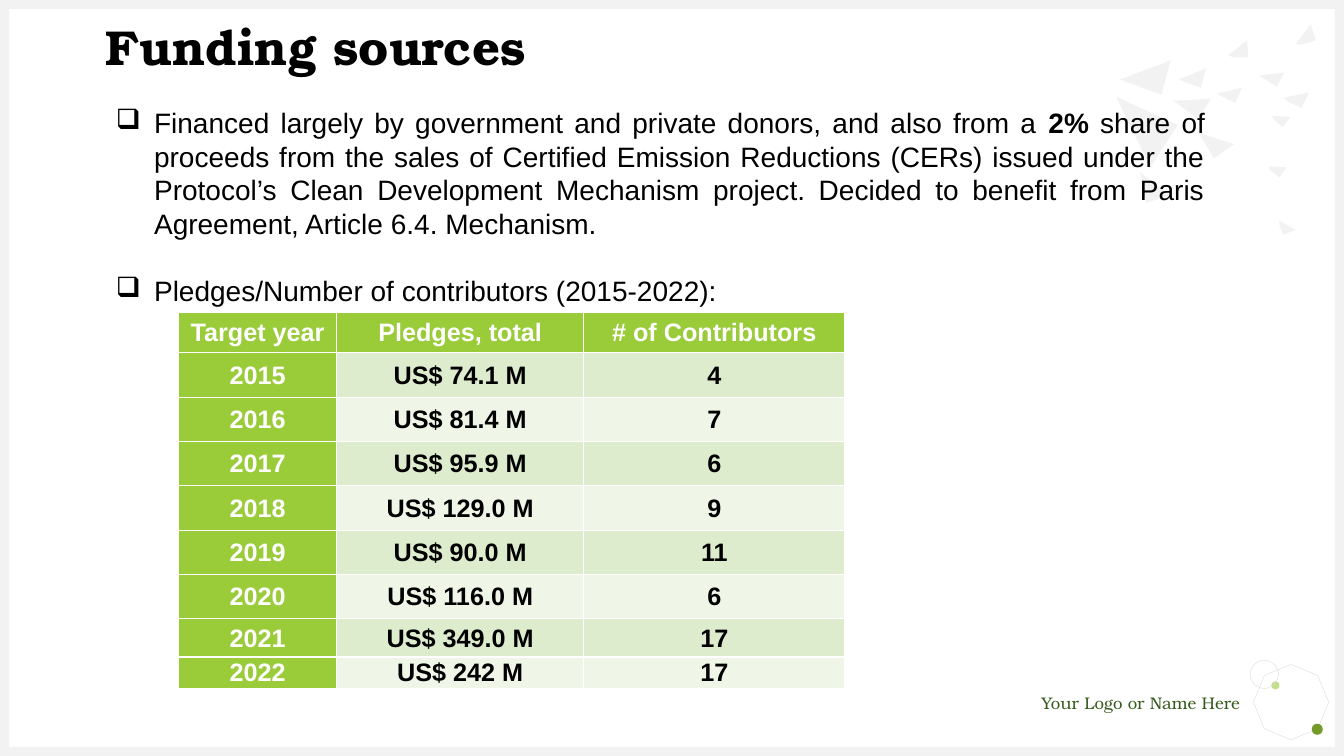
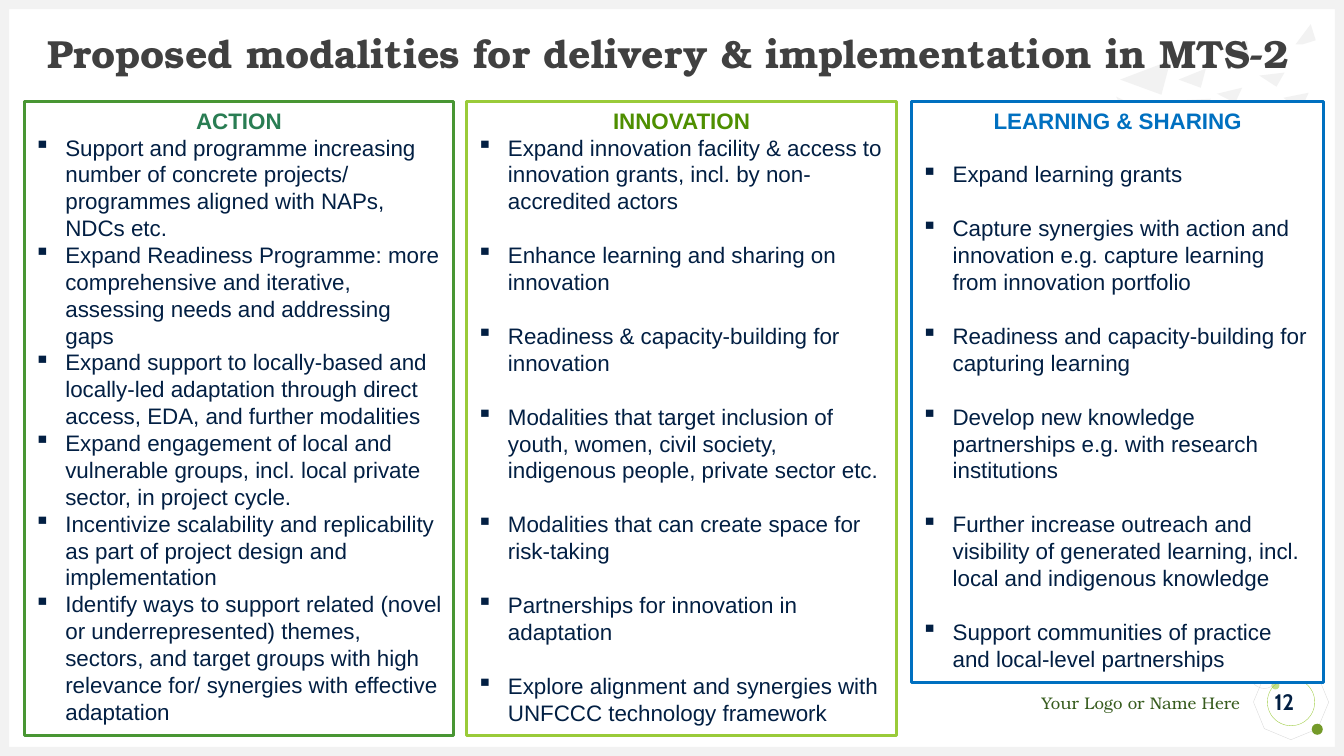
from dataclasses import dataclass

import pptx
import pptx.dml.color
import pptx.enum.shapes
import pptx.enum.text
import pptx.oxml
import pptx.oxml.ns
import pptx.util

SCALE = 9144
SHAPES = pptx.enum.shapes.MSO_SHAPE
ALIGN = pptx.enum.text.PP_ALIGN
ANCHOR = pptx.enum.text.MSO_ANCHOR


@dataclass(frozen=True)
class TextStyle:
    font: str
    size: int
    color: str
    bold: bool = False


class Theme:
    white = "FFFFFF"
    frame = "F2F2F2"
    outline = "D9D9D9"
    green = "9ACB39"
    light_green = "C2E088"
    dark_green = "749A29"
    row_bands = ("DEECCE", "EFF6E8")
    action = ("489633", "297D53")
    innovation = (green, "4E8F00")
    learning = ("0070C0", "0070C0")
    funding_title = TextStyle("TeX Gyre Bonum", 35, "000000", True)
    modalities_title = TextStyle("TeX Gyre Bonum", 28, "404040", True)
    footer = TextStyle("TeX Gyre Bonum", 12, "375C1E")
    body = TextStyle("Arial", 20, "000000")
    table_head = TextStyle("Arial", 18, white, True)
    table_cell = TextStyle("Arial", 18, "000000", True)
    panel_body = TextStyle("Arial", 16, "021F43")
    page_number = TextStyle("Cabin", 16, "021F43", True)
    body_gap = 24
    panel_gap = 19.3


UPPER_TRIANGLES = [
    [(1161, 60), (1152, 94), (1111, 79)],
    [(1201, 98), (1188, 118), (1164, 100)],
    [(1196, 68), (1191, 87), (1169, 79)],
    [(1232, 87), (1225, 102), (1207, 93)],
    [(1237, 40), (1238, 57), (1224, 57), (1218, 55)],
    [(1300, 24), (1305, 40), (1292, 44), (1285, 44)],
    [(1274, 72), (1266, 86), (1249, 75)],
    [(1298, 92), (1291, 107), (1278, 101), (1273, 97)],
    [(1168, 124), (1141, 166), (1107, 96)],
]
LOWER_TRIANGLES = [
    [(1280, 116), (1272, 126), (1264, 119), (1261, 115)],
    [(1224, 143), (1204, 157), (1189, 132)],
    [(1276, 166), (1269, 176), (1260, 169), (1258, 165)],
    [(1160, 194), (1137, 201), (1131, 171)],
    [(1285, 228), (1273, 233), (1269, 223), (1269, 219)],
]


def px(length):
    return pptx.util.Emu(length * SCALE)


def rgb(color):
    return pptx.dml.color.RGBColor.from_string(color)


class Deck:
    def __init__(self):
        self.presentation = pptx.Presentation()
        self.presentation.slide_width = px(1333)
        self.presentation.slide_height = px(750)
        self.slide = None

    def new_slide(self, triangles):
        self.slide = self.presentation.slides.add_slide(self.presentation.slide_layouts[6])
        self.shape(SHAPES.OCTAGON, (1246, 662, 69, 69), line=Theme.outline).rotation = 22.7
        self.shape(SHAPES.OVAL, (1261, 676, 8, 8), fill=Theme.light_green)
        self.shape(SHAPES.OVAL, (1301, 718, 11, 11), fill=Theme.dark_green)
        footer = self.text_box((955, 687, 275, 20), inset=0)
        self.add_text(footer, "Your Logo or Name Here", Theme.footer, ALIGN.RIGHT)
        self.shape(SHAPES.OVAL, (1240, 655, 28, 28), line=Theme.outline)
        for bounds in ((0, 741, 1333, 9), (0, 0, 1333, 9), (0, 0, 9, 750), (1324, 0, 9, 750)):
            self.shape(SHAPES.RECTANGLE, bounds, fill=Theme.frame)
        for points in triangles:
            self.outline(points, Theme.frame)

    def paint(self, shape, fill, line=None, line_width=0.25):
        shape.shadow.inherit = False
        if fill:
            shape.fill.solid()
            shape.fill.fore_color.rgb = rgb(fill)
        else:
            shape.fill.background()
        if line:
            shape.line.color.rgb = rgb(line)
            shape.line.width = pptx.util.Pt(line_width)
        else:
            shape.line.fill.background()
        return shape

    def shape(self, kind, bounds, fill=None, line=None, line_width=0.25):
        shape = self.slide.shapes.add_shape(kind, *map(px, bounds))
        return self.paint(shape, fill, line, line_width)

    def outline(self, points, fill):
        builder = self.slide.shapes.build_freeform(*points[0], scale=SCALE)
        builder.add_line_segments(points[1:], close=True)
        return self.paint(builder.convert_to_shape(), fill)

    def set_inset(self, target, inset):
        target.margin_left = target.margin_top = px(inset)
        target.margin_right = target.margin_bottom = px(inset)

    def text_box(self, bounds, inset=None, anchor=ANCHOR.TOP):
        frame = self.slide.shapes.add_textbox(*map(px, bounds)).text_frame
        frame.word_wrap = True
        frame.vertical_anchor = anchor
        if inset is not None:
            self.set_inset(frame, inset)
        return frame

    def add_text(self, frame, text, style, align=ALIGN.LEFT, bullet=None, indent=0, before=0):
        paragraph = frame.paragraphs[-1]
        if paragraph.runs:
            paragraph = frame.add_paragraph()
        paragraph.alignment = align
        if before:
            paragraph.space_before = pptx.util.Pt(before)
        if bullet:
            properties = paragraph._p.get_or_add_pPr()
            properties.set("marL", str(px(indent)))
            properties.set("indent", str(px(-indent)))
            properties.append(pptx.oxml.parse_xml(
                f'<a:buChar {pptx.oxml.ns.nsdecls("a")} char="{bullet}"/>'))
        font = paragraph.font
        font.name = style.font
        font.size = pptx.util.Pt(style.size)
        font.bold = style.bold
        font.color.rgb = rgb(style.color)
        paragraph.add_run().text = text
        return paragraph

    def table(self, left, top, widths, heights, rows):
        table = self.slide.shapes.add_table(
            len(rows), len(widths), px(left), px(top), px(sum(widths)), px(sum(heights))).table
        for column, width in zip(table.columns, widths):
            column.width = px(width)
        for row, height in zip(table.rows, heights):
            row.height = px(height)
        for row_index, values in enumerate(rows):
            for column_index, value in enumerate(values):
                heading = row_index == 0 or column_index == 0
                fill = Theme.green if heading else Theme.row_bands[(row_index - 1) % 2]
                style = Theme.table_head if heading else Theme.table_cell
                self.cell(table.cell(row_index, column_index), value, fill, style)

    def cell(self, cell, value, fill, style):
        self.set_inset(cell, 1)
        cell.margin_bottom = 0
        cell.vertical_anchor = ANCHOR.MIDDLE
        properties = cell._tc.get_or_add_tcPr()
        for side in "LRTB":
            properties.append(pptx.oxml.parse_xml(
                f'<a:ln{side} {pptx.oxml.ns.nsdecls("a")} w="12700"><a:solidFill>'
                f'<a:srgbClr val="{Theme.white}"/></a:solidFill></a:ln{side}>'))
        cell.fill.solid()
        cell.fill.fore_color.rgb = rgb(fill)
        self.add_text(cell.text_frame, value, style, ALIGN.CENTER)

    def panel(self, bounds, colors, heading, items, first_gap=0, gap=0):
        line, heading_color = colors
        frame = self.shape(SHAPES.RECTANGLE, bounds, Theme.white, line, 2).text_frame
        frame.word_wrap = True
        frame.vertical_anchor = ANCHOR.TOP
        body = Theme.panel_body
        heading_style = TextStyle(body.font, body.size, heading_color, True)
        self.add_text(frame, heading, heading_style, ALIGN.CENTER)
        for index, item in enumerate(items):
            before = gap if index else first_gap
            self.add_text(frame, item, body, bullet="▪", indent=31, before=before)


def funding_slide(deck):
    deck.new_slide(UPPER_TRIANGLES + LOWER_TRIANGLES)
    deck.add_text(deck.text_box((95, 11, 1220, 69)), "Funding sources", Theme.funding_title)
    body = deck.text_box((105, 100, 1100, 210))
    financing = deck.add_text(
        body, "Financed largely by government and private donors, and also from a ",
        Theme.body, ALIGN.JUSTIFY, "❑", 38)
    share = financing.add_run()
    share.text = "2% "
    share.font.bold = True
    financing.add_run().text = (
        "share of proceeds from the sales of Certified Emission Reductions (CERs) issued under "
        "the Protocol’s Clean Development Mechanism project. Decided to benefit from Paris "
        "Agreement, Article 6.4. Mechanism.")
    deck.add_text(body, "Pledges/Number of contributors (2015-2022):", Theme.body,
                  ALIGN.JUSTIFY, "❑", 38, Theme.body_gap)
    deck.table(177, 310, (157, 245, 259), (40, *[44] * 6, 38, 30), [
        ("Target year", "Pledges, total", "# of Contributors"),
        ("2015", "US$ 74.1 M", "4"),
        ("2016", "US$ 81.4 M", "7"),
        ("2017", "US$ 95.9 M", "6"),
        ("2018", "US$ 129.0 M", "9"),
        ("2019", "US$ 90.0 M", "11"),
        ("2020", "US$ 116.0 M", "6"),
        ("2021", "US$ 349.0 M", "17"),
        ("2022", "US$ 242 M", "17"),
    ])


def modalities_slide(deck):
    deck.new_slide(UPPER_TRIANGLES)
    title = deck.text_box((47, 26, 1249, 59), inset=0, anchor=ANCHOR.MIDDLE)
    deck.add_text(title, "Proposed modalities for delivery & implementation in MTS-2",
                  Theme.modalities_title).line_spacing = 0.9
    badge = deck.shape(SHAPES.OVAL, (1257, 673, 47, 47), line=Theme.green).text_frame
    deck.set_inset(badge, 0)
    badge.vertical_anchor = ANCHOR.MIDDLE
    deck.add_text(badge, "12", Theme.page_number)
    deck.panel((24, 101, 426, 629), Theme.action, "ACTION", [
        "Support and programme increasing number of concrete projects/ programmes aligned with "
        "NAPs, NDCs etc.",
        "Expand Readiness Programme: more comprehensive and iterative, assessing needs and "
        "addressing gaps",
        "Expand support to locally-based and locally-led adaptation through direct access, EDA, "
        "and further modalities",
        "Expand engagement of local and vulnerable groups, incl. local private sector, in "
        "project cycle.",
        "Incentivize scalability and replicability as part of project design and implementation",
        "Identify ways to support related (novel or underrepresented) themes, sectors, and "
        "target groups with high relevance for/ synergies with effective adaptation",
    ])
    deck.panel((463, 101, 426, 629), Theme.innovation, "INNOVATION", [
        "Expand innovation facility & access to innovation grants, incl. by non-accredited actors",
        "Enhance learning and sharing on innovation",
        "Readiness & capacity-building for innovation",
        "Modalities that target inclusion of youth, women, civil society, indigenous people, "
        "private sector etc.",
        "Modalities that can create space for risk-taking",
        "Partnerships for innovation in adaptation",
        "Explore alignment and synergies with UNFCCC technology framework",
    ], gap=Theme.panel_gap)
    deck.panel((904, 101, 409, 576), Theme.learning, "LEARNING & SHARING", [
        "Expand learning grants",
        "Capture synergies with action and innovation e.g. capture learning from innovation "
        "portfolio",
        "Readiness and capacity-building for capturing learning",
        "Develop new knowledge partnerships e.g. with research institutions",
        "Further increase outreach and visibility of generated learning, incl. local and "
        "indigenous knowledge",
        "Support communities of practice and local-level partnerships",
    ], first_gap=Theme.panel_gap, gap=Theme.panel_gap)


def main():
    deck = Deck()
    funding_slide(deck)
    modalities_slide(deck)
    deck.presentation.save("out.pptx")


if __name__ == "__main__":
    main()
